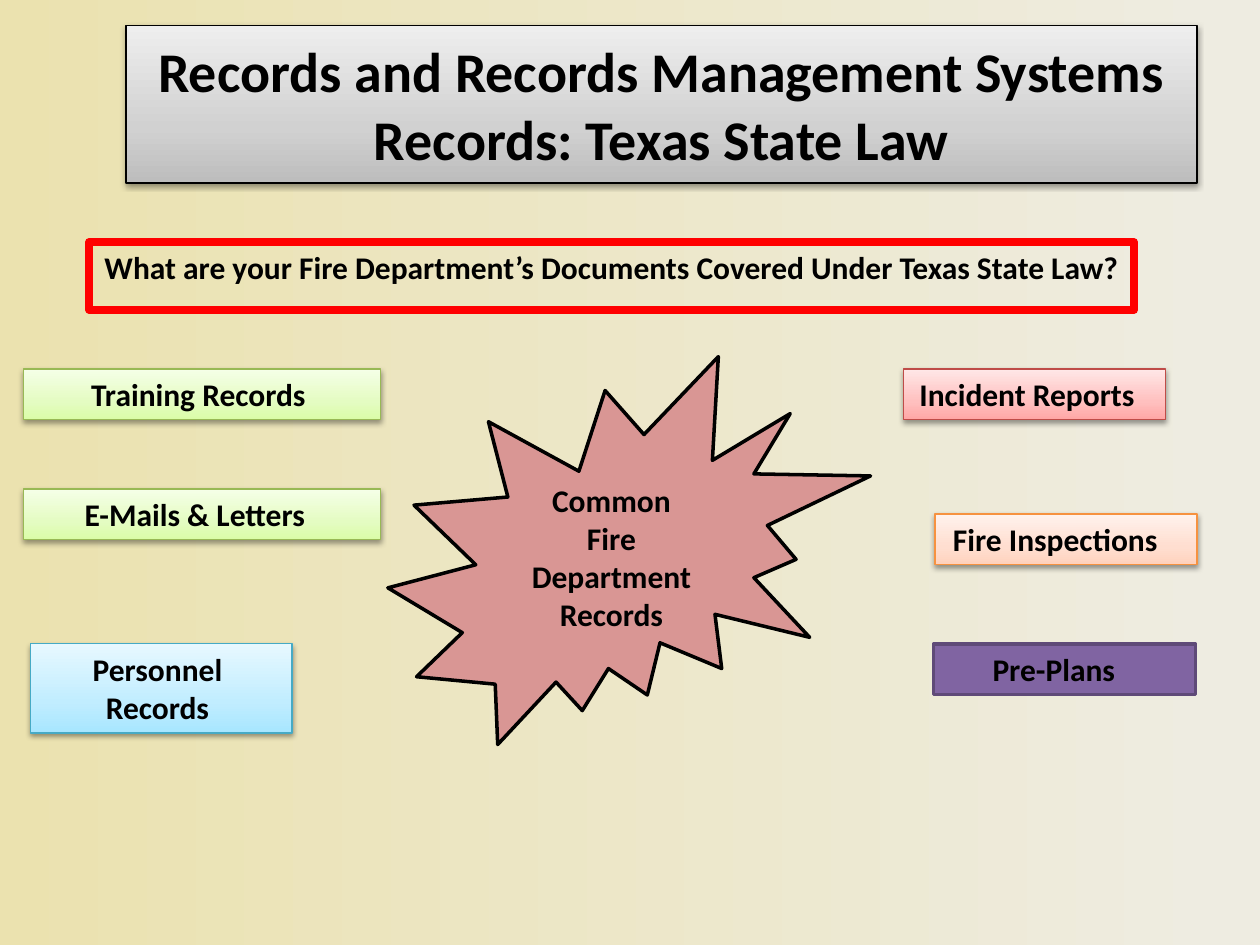
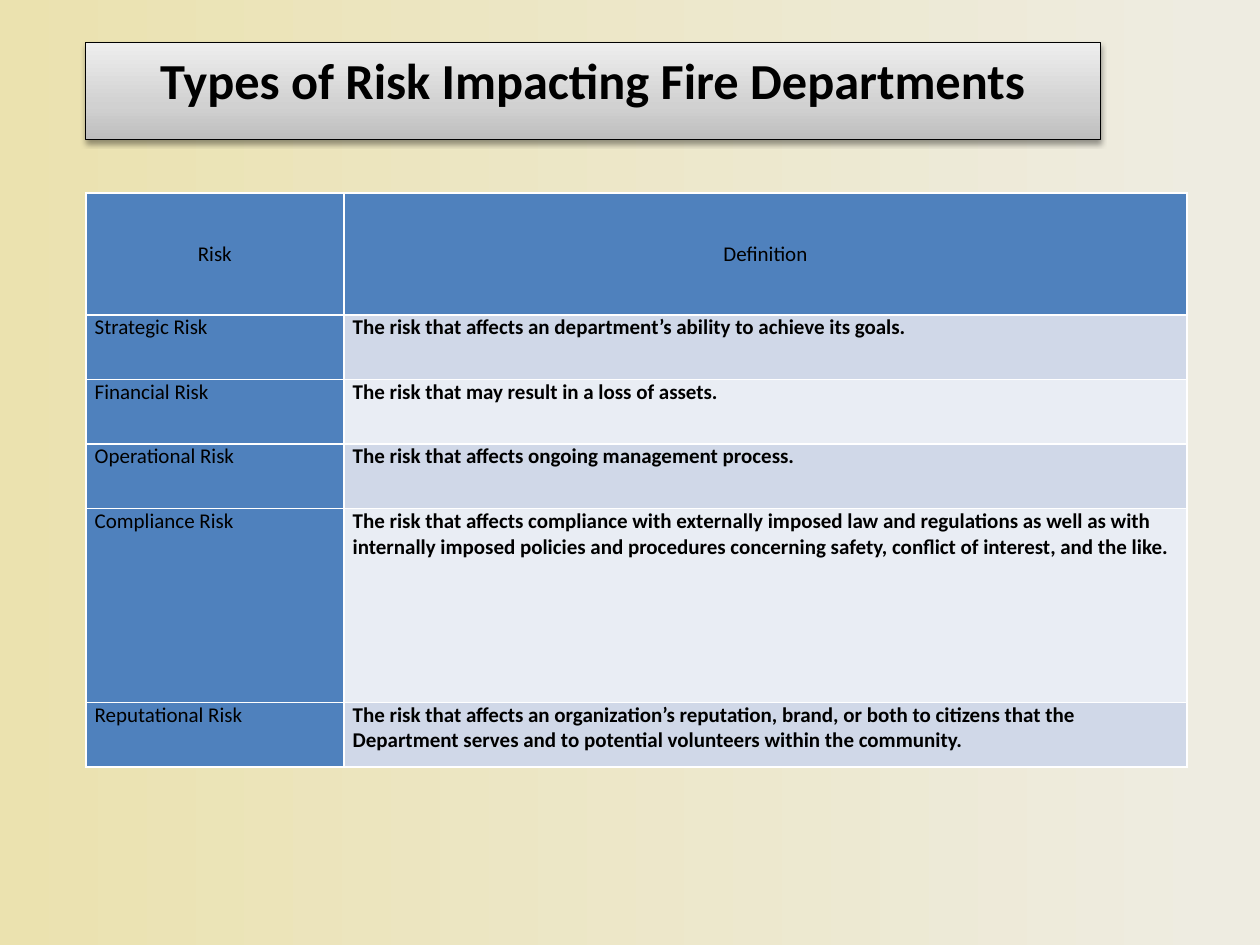
import copy

import pptx
import pptx.dml.color
import pptx.enum.shapes
import pptx.enum.text
import pptx.oxml
import pptx.oxml.ns
import pptx.util

Cm = pptx.util.Cm
Pt = pptx.util.Pt
RGBColor = pptx.dml.color.RGBColor
SHAPE = pptx.enum.shapes.MSO_SHAPE
ANCHOR = pptx.enum.text.MSO_ANCHOR
CENTER = pptx.enum.text.PP_ALIGN.CENTER
LEFT = pptx.enum.text.PP_ALIGN.LEFT
qn = pptx.oxml.ns.qn

FONT = "Calibri"
BLACK = RGBColor(0x00, 0x00, 0x00)
RED = RGBColor(0xFF, 0x00, 0x00)
ROSE = RGBColor(0xD9, 0x96, 0x94)
PURPLE = RGBColor(0x80, 0x64, 0xA2)
DARK_PURPLE = RGBColor(0x5F, 0x4A, 0x78)
HEADER_BLUE = RGBColor(0x4F, 0x81, 0xBD)
BANDS = [RGBColor(0xD0, 0xD8, 0xE8), RGBColor(0xE9, 0xED, 0xF4)]
SAND = [(0, RGBColor(0xEB, 0xE2, 0xAF)), (0.97, RGBColor(0xEE, 0xEC, 0xE1))]

# Each tint: bottom, lower third and top colour, then the outline
GREY = (RGBColor(0xBD, 0xBD, 0xBD), RGBColor(0xD1, 0xD1, 0xD1), RGBColor(0xEE, 0xEE, 0xEE), BLACK)
GREEN = (RGBColor(0xDA, 0xFD, 0xA7), RGBColor(0xE4, 0xFC, 0xC2), RGBColor(0xF5, 0xFF, 0xE7),
         RGBColor(0x98, 0xB9, 0x55))
AQUA = (RGBColor(0xA7, 0xE6, 0xFF), RGBColor(0xC1, 0xED, 0xFF), RGBColor(0xE7, 0xF8, 0xFF),
        RGBColor(0x46, 0xAA, 0xC5))
PINK = (RGBColor(0xFF, 0xA6, 0xA5), RGBColor(0xFF, 0xC0, 0xBF), RGBColor(0xFF, 0xE7, 0xE7),
        RGBColor(0xBF, 0x4C, 0x48))
ORANGE = (RGBColor(0xFF, 0xD2, 0xBD), RGBColor(0xFF, 0xDE, 0xD0), RGBColor(0xFF, 0xF2, 0xED),
          RGBColor(0xF6, 0x92, 0x40))

SHADOW = (
    '<a:outerShdw xmlns:a="http://schemas.openxmlformats.org/drawingml/2006/main"'
    ' blurRad="40000" dist="20000" dir="5400000" rotWithShape="0">'
    '<a:srgbClr val="000000"><a:alpha val="38000"/></a:srgbClr></a:outerShdw>'
)


def paint(shape, colors, line_width):
    """Fill and outline a shape; a tint of four also brings a gradient and a soft shadow."""
    *fills, outline = colors
    shape.shadow.inherit = False
    shape.line.color.rgb = outline
    shape.line.width = Pt(line_width)
    if len(fills) == 3:
        shape.fill.gradient()
        shape.fill.gradient_angle = 90
        stop_list = shape.element.find(".//" + qn("a:gsLst"))
        stop_list.insert(1, copy.deepcopy(stop_list[0]))
        for stop, position, color in zip(shape.fill.gradient_stops, (0, 0.35, 1), fills):
            stop.position = position
            stop.color.rgb = color
        shape.element.find(".//" + qn("a:effectLst")).append(pptx.oxml.parse_xml(SHADOW))
    elif fills:
        shape.fill.solid()
        shape.fill.fore_color.rgb = fills[0]
    else:
        shape.fill.background()


def write(frame, lines, size, bold=True, align=CENTER, anchor=ANCHOR.TOP):
    frame.vertical_anchor = anchor
    for number, line in enumerate(lines):
        paragraph = frame.add_paragraph() if number else frame.paragraphs[0]
        paragraph.alignment = align
        run = paragraph.add_run()
        run.text = line
        run.font.name = FONT
        run.font.size = Pt(size)
        run.font.bold = bold
        run.font.color.rgb = BLACK


deck = pptx.Presentation()
deck.slide_width, deck.slide_height = Cm(25.4), Cm(19.05)
backdrop = deck.slide_master.background.fill
backdrop.gradient()
backdrop.gradient_angle = 0
for stop, (position, color) in zip(backdrop.gradient_stops, SAND):
    stop.position = position
    stop.color.rgb = color

# Both slides: grey title plate
plates = [
    ((2.54, 0.51, 21.59, 3.18), 32, ANCHOR.MIDDLE,
     ["Records and Records Management Systems", "Records: Texas State Law"]),
    ((1.73, 0.86, 20.45, 1.96), 28.8, ANCHOR.TOP, ["Types of Risk Impacting Fire Departments"]),
]
slides = []
for place, size, anchor, lines in plates:
    slide = deck.slides.add_slide(deck.slide_layouts[5])
    title = slide.shapes.title
    title.left, title.top, title.width, title.height = map(Cm, place)
    paint(title, GREY, 0.75)
    title.text_frame.auto_size = pptx.enum.text.MSO_AUTO_SIZE.NONE
    write(title.text_frame, lines, size, anchor=anchor)
    slides.append(slide)
records_slide, risk_slide = slides

# Slide 1: kinds of records around a burst
# The second title line sits slightly left of the first
heading = records_slide.shapes.title.text_frame
heading.margin_left, heading.margin_right = Cm(0), Cm(0.53)
heading.paragraphs[0]._p.get_or_add_pPr().set("marL", str(Cm(0.53)))

question = records_slide.shapes.add_shape(SHAPE.RECTANGLE, Cm(1.8), Cm(4.88), Cm(21.06), Cm(1.37))
paint(question, (RED,), 4.5)
write(question.text_frame,
      ["What are your Fire Department’s Documents Covered Under Texas State Law?"], 18)

burst = records_slide.shapes.add_shape(SHAPE.EXPLOSION2, Cm(7.82), Cm(7.19), Cm(9.73), Cm(7.82))
paint(burst, (ROSE, BLACK), 2)
write(burst.text_frame, ["Common", "Fire Department Records"], 18, anchor=ANCHOR.MIDDLE)

# Name, left, top, width, height, right inset, colours, line width
record_kinds = [
    ("Training Records", 0.48, 7.44, 7.19, 1.02, 0.4, GREEN, 0.75),
    ("E-Mails & Letters", 0.48, 9.86, 7.19, 1.02, 0.54, GREEN, 0.75),
    ("Personnel Records", 0.61, 12.98, 5.28, 1.8, 0.4, AQUA, 0.75),
    ("Incident Reports", 18.21, 7.44, 5.28, 1.02, 0.54, PINK, 0.75),
    ("Fire Inspections", 18.85, 10.36, 5.28, 1.02, 0.68, ORANGE, 0.75),
    ("Pre-Plans", 18.82, 12.98, 5.28, 1.02, 0.68, (PURPLE, DARK_PURPLE), 2),
]
for name, left, top, width, height, inset, colors, line_width in record_kinds:
    record = records_slide.shapes.add_shape(
        SHAPE.RECTANGLE, Cm(left), Cm(top), Cm(width), Cm(height))
    paint(record, colors, line_width)
    record.text_frame.margin_right = Cm(inset)
    write(record.text_frame, [name], 18)

# Slide 2: table of risks
risks = [
    ("Risk", "Definition", 2.46),
    ("Strategic Risk", "The risk that affects an department’s ability to achieve its goals.", 1.3),
    ("Financial Risk", "The risk that may result in a loss of assets.", 1.3),
    ("Operational Risk", "The risk that affects ongoing management process.", 1.3),
    ("Compliance Risk",
     "The risk that affects compliance with externally imposed law and regulations as well as with "
     "internally imposed policies and procedures concerning safety, conflict of interest, "
     "and the like.", 3.91),
    ("Reputational Risk",
     "The risk that affects an organization’s reputation, brand, or both to citizens that the "
     "Department serves and to potential volunteers within the community.", 1.3),
]
risk_table = risk_slide.shapes.add_table(
    len(risks), 2, Cm(1.73), Cm(3.89), Cm(22.2), Cm(11.57)).table
risk_table.columns[0].width, risk_table.columns[1].width = Cm(5.2), Cm(17)
for row, (risk, definition, height) in enumerate(risks):
    risk_table.rows[row].height = Cm(height)
    for column, wording in enumerate((risk, definition)):
        cell = risk_table.cell(row, column)
        is_header = row == 0
        is_definition = column == 1 and not is_header
        cell.fill.solid()
        cell.fill.fore_color.rgb = BANDS[(row - 1) % 2] if is_definition else HEADER_BLUE
        cell.margin_left = cell.margin_right = Cm(0.18)
        cell.margin_top = cell.margin_bottom = Cm(0)
        write(cell.text_frame, [wording], 12, is_definition, CENTER if is_header else LEFT)
        cell.vertical_anchor = ANCHOR.MIDDLE if is_header else ANCHOR.TOP

deck.save("out.pptx")
